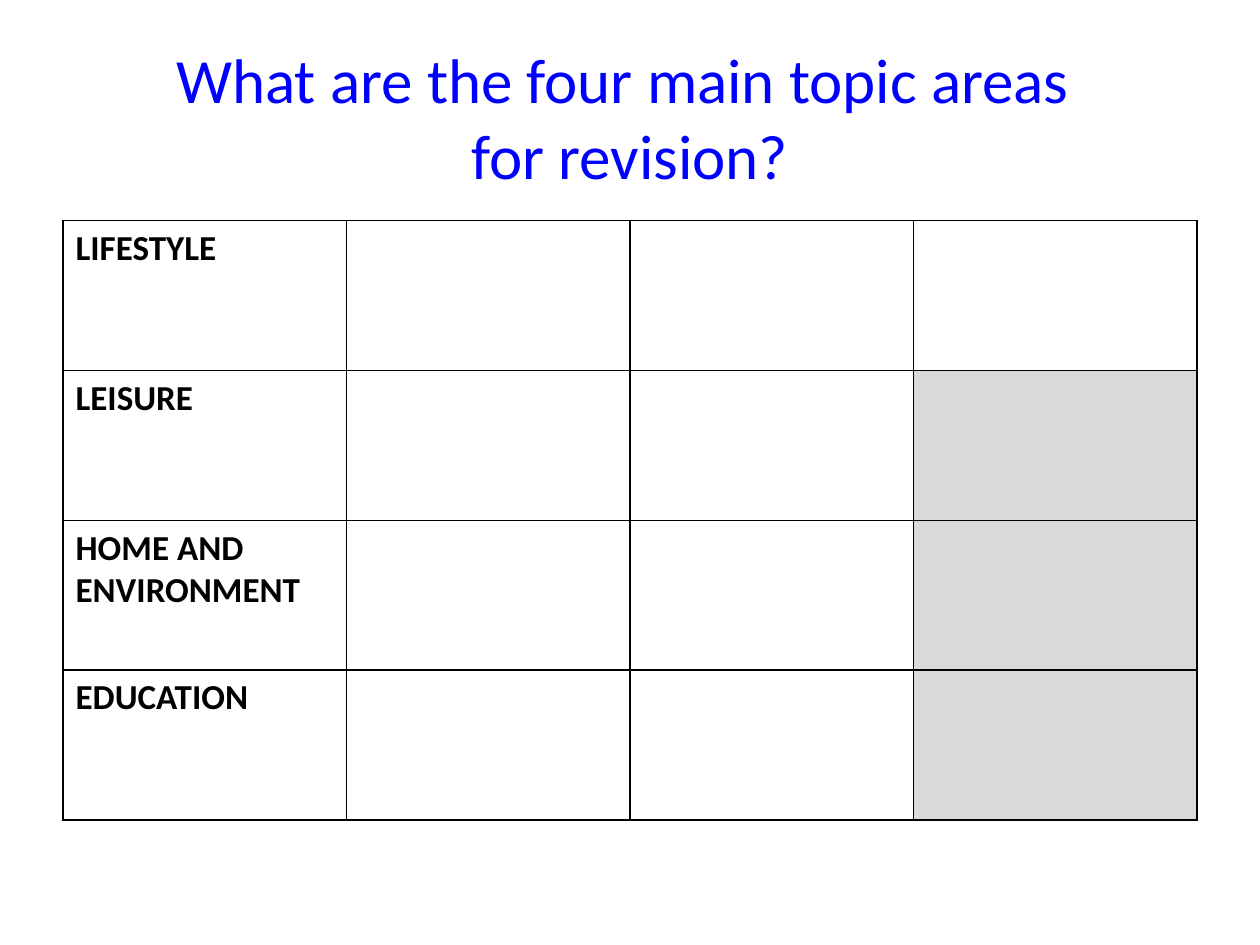
from lxml import etree
from pptx import Presentation, util as u
from pptx.dml.color import RGBColor
from pptx.enum import text as t
from pptx.oxml.ns import qn

HUES = {"title": "0000FF", "ink": "000000", "page": "FFFFFF", "shade": "D9D9D9"}
TOPICS = ["LIFESTYLE", "LEISURE", "HOME AND ENVIRONMENT", "EDUCATION"]
COLS = 4


def write(frame, words, size=20, hue="ink", bold=False, align=t.PP_ALIGN.LEFT):
    """Fill a text frame; a vertical tab in the words breaks the line."""
    para = frame.paragraphs[0]
    para.text = words
    para.alignment = align
    for run in para.runs:
        font = run.font
        font.name, font.size, font.bold = "Calibri", u.Pt(size), bold
        font.color.rgb = RGBColor.from_string(HUES[hue])


class Deck:
    """Holds the style and the current slide; lengths are shares of its size."""

    def __init__(self, wide=10, high=7.5):
        self.prs = Presentation()
        self.prs.slide_width = u.Inches(wide)
        self.prs.slide_height = u.Inches(high)
        self.slide = self.prs.slides.add_slide(self.prs.slide_layouts[5])

    def box(self, x, y, w, h):
        wide, high = self.prs.slide_width, self.prs.slide_height
        return [u.Emu(round(v)) for v in (x * wide, y * high, w * wide, h * high)]

    def title(self, words, *area):
        shape = self.slide.shapes.title
        shape.left, shape.top, shape.width, shape.height = self.box(*area)
        frame = shape.text_frame
        frame.auto_size = t.MSO_AUTO_SIZE.NONE
        frame.vertical_anchor = t.MSO_ANCHOR.MIDDLE
        write(frame, words, size=36, hue="title", align=t.PP_ALIGN.CENTER)

    def edge(self, cell, width=1):
        props = cell._tc.get_or_add_tcPr()
        for side in ("lnL", "lnR", "lnT", "lnB"):
            line = etree.SubElement(props, qn(f"a:{side}"), w=str(u.Pt(width)))
            fill = etree.SubElement(line, qn("a:solidFill"))
            etree.SubElement(fill, qn("a:srgbClr"), val=HUES["ink"])

    def table(self, heads, cols, *area):
        grid = self.slide.shapes.add_table(len(heads), cols, *self.box(*area)).table
        grid.first_row = grid.horz_banding = False
        for row, head in enumerate(heads):
            write(grid.cell(row, 0).text_frame, head, bold=True)
            for col in range(cols):
                cell = grid.cell(row, col)
                self.edge(cell)
                # Only the first topic uses the last column
                hue = "shade" if row and col == cols - 1 else "page"
                cell.fill.solid()
                cell.fill.fore_color.rgb = RGBColor.from_string(HUES[hue])


def main():
    deck = Deck()
    # Question
    deck.title("What are the four main topic areas \vfor revision?",
               0.05, 0.04, 0.9, 1.25 / 7.5)
    # Topic grid
    deck.table(TOPICS, COLS, 0.05, 1.75 / 7.5, 0.9, 4.76 / 7.5)
    deck.prs.save("out.pptx")


if __name__ == "__main__":
    main()
